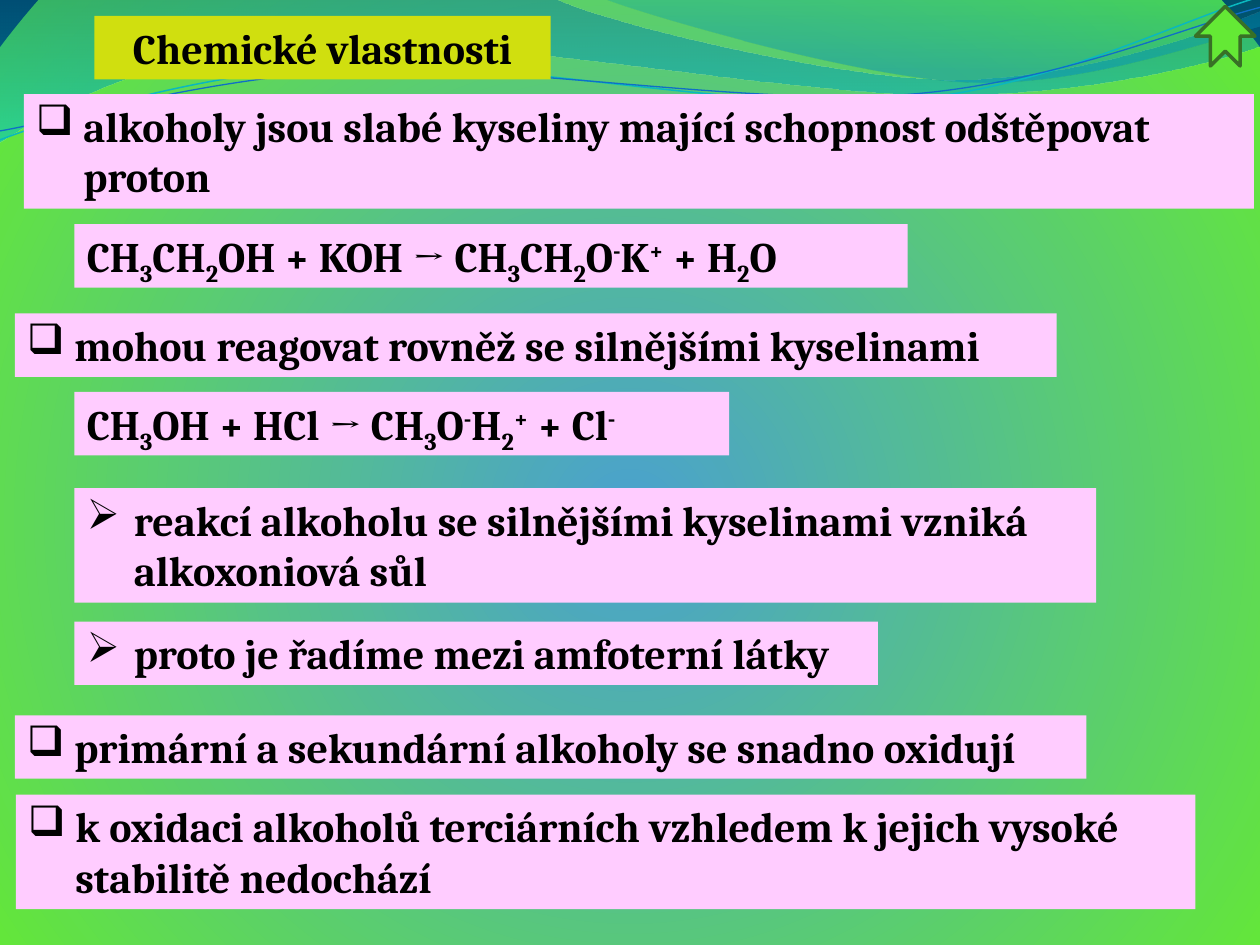
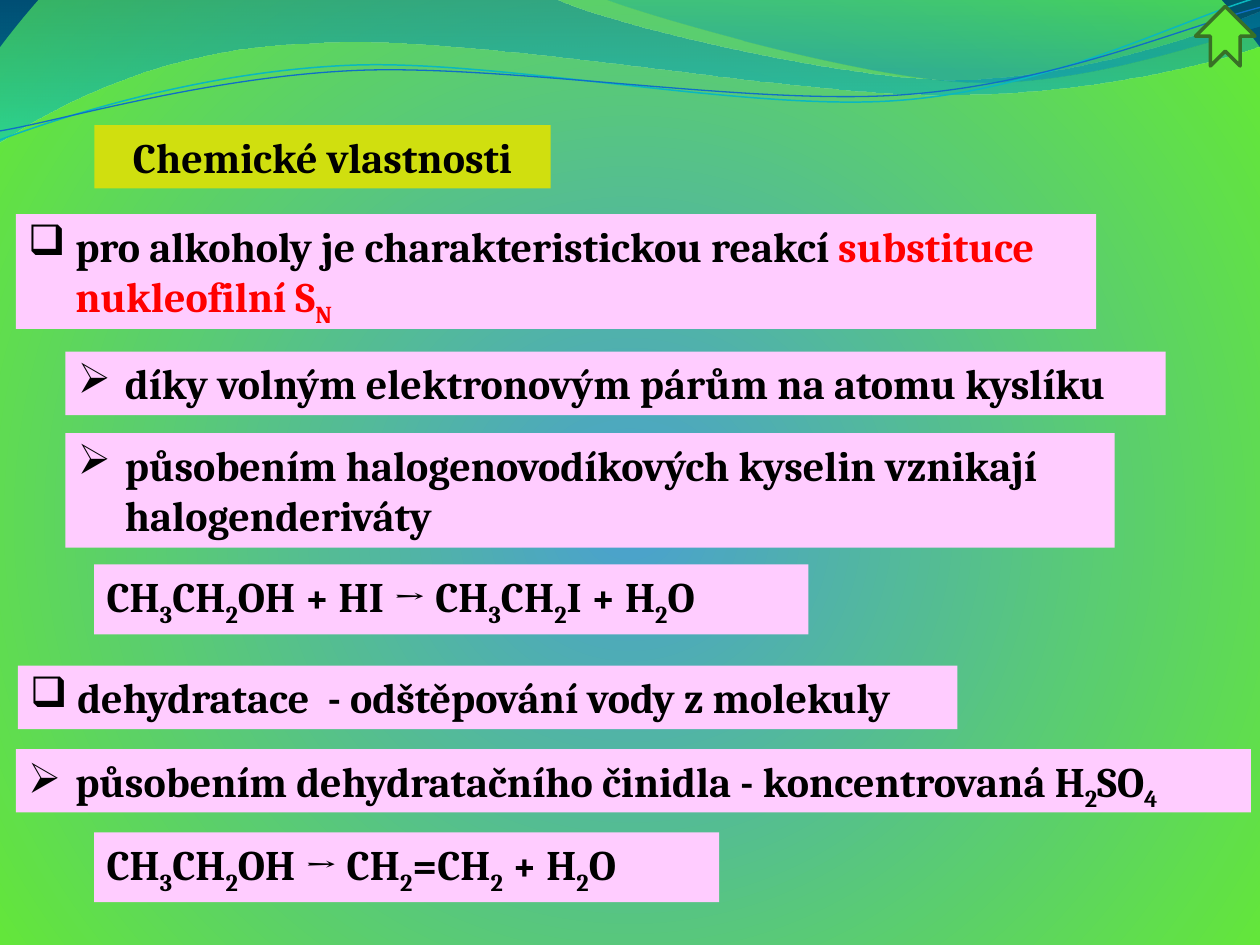
from lxml import etree
from pptx import Presentation
from pptx import util as u
from pptx.dml.color import RGBColor
from pptx.enum import shapes, text as t
from pptx.oxml.ns import qn

COLORS = {
    "title": "D0DF0F", "box": "FFCCFF", "text": "000000", "accent": "FF0000",
    "center": "4AA0D0", "edge": "64E935", "corner": "003050",
    "deep": "0074A1", "aqua": "00C6CF", "teal": "00A1A9", "blue": "008BBF",
    "cyan line": "0AB8BF", "blue line": "0F6FC6", "arrow line": "387026",
}
FONT, SIZE, BULLET_FONT = "Cambria", 24, "Wingdings"
TITLE = "Chemické vlastnosti"
SQUARE, POINTER, FORMULA = "q", "Ø", ""  # bullets are Wingdings letters
ONE_LINE, TWO_LINES, TALL = 1.28, 2.31, 1.41

# _x lowers and ^x raises one character, *...* is the accent colour.
# Each box: bullet, text, left, top, width, height in centimetres.
PAGES = [
    {"title top": 0.32, "boxes": [
        (SQUARE, "alkoholy jsou slabé kyseliny mající schopnost odštěpovat proton",
         0.48, 1.9, 24.8, TWO_LINES),
        (FORMULA, "CH_3CH_2OH + KOH → CH_3CH_2O^-K^+ + H_2O", 1.5, 4.52, 16.8, ONE_LINE),
        (SQUARE, "mohou reagovat rovněž se silnějšími kyselinami",
         0.3, 6.32, 21, ONE_LINE),
        (FORMULA, "CH_3OH + HCl → CH_3O^-H_2^+ + Cl^-", 1.5, 7.9, 13.2, ONE_LINE),
        (POINTER, "reakcí alkoholu se silnějšími kyselinami vzniká\nalkoxoniová sůl",
         1.5, 9.84, 20.6, TWO_LINES),
        (POINTER, "proto je řadíme mezi amfoterní látky", 1.5, 12.53, 16.2, ONE_LINE),
        (SQUARE, "primární a sekundární alkoholy se snadno oxidují",
         0.3, 14.42, 21.6, ONE_LINE),
        (SQUARE, "k oxidaci alkoholů terciárních vzhledem k jejich vysoké "
         "stabilitě nedochází", 0.32, 16.02, 23.78, TWO_LINES),
    ]},
    {"title top": 2.52, "boxes": [
        (SQUARE, "pro alkoholy je charakteristickou reakcí *substituce nukleofilní S_N*",
         0.32, 4.32, 21.78, TWO_LINES),
        (POINTER, "díky volným elektronovým párům na atomu kyslíku",
         1.32, 7.09, 22.18, ONE_LINE),
        (POINTER, "působením halogenovodíkových kyselin vznikají halogenderiváty",
         1.32, 8.73, 21.15, TWO_LINES),
        (FORMULA, "CH_3CH_2OH + HI → CH_3CH_2I + H_2O", 1.9, 11.38, 14.4, TALL),
        (SQUARE, "dehydratace  - odštěpování vody z molekuly",
         0.36, 13.42, 18.94, ONE_LINE),
        (POINTER, "působením dehydratačního činidla - koncentrovaná H_2SO_4",
         0.32, 15.1, 24.9, ONE_LINE),
        (FORMULA, "CH_3CH_2OH → CH_2=CH_2 + H_2O", 1.9, 16.78, 12.6, TALL),
    ]},
]

# Each wave is a list of Bézier chains, joined by straight lines.
BANDS = [
    ([[(0, 0)],
      [(11.18, -0.03), (12.09, 0.43), (16.87, 1.6), (19.25, 1.6),
       (21.67, 1.6), (24.33, 0.66), (25.4, 0.23)],
      [(25.43, 0.91), (24.97, 1.12), (22.1, 1.93), (18.95, 1.91),
       (15.8, 1.91), (9.7, 0.71), (6.53, 0.86), (3.28, 0.91), (1.17, 2.11), (-0.03, 2.87)]],
     [(0, "deep", 45), (100, "aqua", 55)]),
    ([[(12.17, -0.03), (12.93, 0.28), (17.32, 1.57), (19.53, 1.65),
       (21.74, 1.75), (24.41, 0.81), (25.4, 0.53)], [(25.4, 0)]],
     [(0, "teal", 30), (80, "blue", 45)]),
]
CURVE_ANGLE = 357.3
CURVES = [
    ([[(-0.05, 2.22), (1.19, 1.82), (4.02, 1.04), (7.05, 1.05), (10.05, 1.06),
       (15.02, 2.37), (18.08, 2.28), (21.13, 2.2), (23.87, 0.91), (25.41, 0.55)]],
     "cyan line", 0.85),
    ([[(-0.04, 2.04), (1.16, 1.9), (4.18, 1.15), (7.2, 1.16), (10.25, 1.18),
       (15.13, 2.25), (18.18, 2.17), (21.21, 2.1), (23.93, 1.06), (25.45, 0.75)]],
     "blue line", 0.75),
]


def rgb(name):
    return RGBColor.from_string(COLORS[name])


def paint(shape, fill=None, line=None, width=1):
    if fill:
        shape.fill.solid()
        shape.fill.fore_color.rgb = rgb(fill)
    else:
        shape.fill.background()
    if line:
        shape.line.color.rgb = rgb(line)
        shape.line.width = u.Pt(width)
    else:
        shape.line.fill.background()
    shape.shadow.inherit = False


def set_gradient(owner, fill, stops, center=None):
    """Vertical gradient, or a circular one when center gives its fill-to rectangle."""
    fill.gradient()
    gradient = owner.find(".//" + qn("a:gradFill"))
    gradient.clear()
    stop_list = etree.SubElement(gradient, qn("a:gsLst"))
    for position, name, opacity in stops:
        stop = etree.SubElement(stop_list, qn("a:gs"), pos=str(position * 1000))
        color = etree.SubElement(stop, qn("a:srgbClr"), val=COLORS[name])
        if opacity < 100:
            etree.SubElement(color, qn("a:alpha"), val=str(opacity * 1000))
    if center:
        shade = etree.SubElement(gradient, qn("a:path"), {"path": "circle"})
        sides = {side: str(value * 1000) for side, value in center.items()}
        etree.SubElement(shade, qn("a:fillToRect"), sides)
    else:
        etree.SubElement(gradient, qn("a:lin"), ang="5400000", scaled="1")


def add_wave(page, chains, close):
    """Draw the control points as a polygon, then turn its sides into curves."""
    points = [(u.Cm(x), u.Cm(y)) for chain in chains for x, y in chain]
    builder = page.shapes.build_freeform(*points[0])
    builder.add_line_segments(points[1:], close=close)
    wave = builder.convert_to_shape()
    steps = list(wave.element.find(".//" + qn("a:path")))
    start = 0
    for chain in chains:
        for first in range(start + 1, start + len(chain), 3):
            curve = etree.Element(qn("a:cubicBezTo"))
            steps[first].addprevious(curve)
            for step in steps[first:first + 3]:
                curve.append(step[0])
                step.getparent().remove(step)
        start += len(chain)
    return wave


def add_waves_to_layout(page):
    waves = []
    for chains, stops in BANDS:
        wave = add_wave(page, chains, True)
        paint(wave)
        set_gradient(wave.element, wave.fill, stops)
        waves.append(wave)
    for chains, color, width in CURVES:
        wave = add_wave(page, chains, False)
        wave.rotation = CURVE_ANGLE
        paint(wave, line=color, width=width)
        waves.append(wave)
    for wave in waves:
        page.slide_layout.shapes.element.append(wave.element)


def split_spans(marked):
    """Yield (text, baseline, color) for each stretch of equal format."""
    baselines = {"_": -25, "^": 30}
    baseline, color, part = 0, "text", ""
    for sign in marked:
        if sign in baselines or sign == "*":
            if part:
                yield part, baseline, color
            part, baseline = "", baselines.get(sign, 0)
            if sign == "*":
                color = "accent" if color == "text" else "text"
        elif baseline and part:
            yield part, baseline, color
            part, baseline = sign, 0
        else:
            part += sign
    if part:
        yield part, baseline, color


def write(shape, marked, align=t.PP_ALIGN.LEFT, bullet=""):
    frame = shape.text_frame
    frame.word_wrap = True
    frame.auto_size = t.MSO_AUTO_SIZE.NONE
    frame.vertical_anchor = t.MSO_ANCHOR.TOP
    para = frame.paragraphs[0]
    para.alignment = align
    if bullet:
        properties = para._p.get_or_add_pPr()
        properties.set("marL", str(u.Cm(0.95)))
        properties.set("indent", str(-u.Cm(0.95)))
        etree.SubElement(properties, qn("a:buFont"), typeface=BULLET_FONT,
                         pitchFamily="2", charset="2")
        etree.SubElement(properties, qn("a:buChar"), char=bullet)
    for number, line in enumerate(marked.split("\n")):
        if number:
            para.add_line_break()
        for part, baseline, color in split_spans(line):
            span = para.add_run()
            span.text = part
            span.font.name, span.font.size, span.font.bold = FONT, u.Pt(SIZE), True
            span.font.color.rgb = rgb(color)
            if baseline:
                span._r.get_or_add_rPr().set("baseline", str(baseline * 1000))


def add_title(page, top):
    title = page.shapes.title
    title.left, title.top = u.Cm(1.9), u.Cm(top)
    title.width, title.height = u.Cm(9.2), u.Cm(ONE_LINE)
    title.fill.solid()
    title.fill.fore_color.rgb = rgb("title")
    write(title, TITLE, align=t.PP_ALIGN.CENTER)


def add_box(page, bullet, marked, *place):
    box = page.shapes.add_shape(shapes.MSO_SHAPE.RECTANGLE, *map(u.Cm, place))
    paint(box, "box")
    write(box, marked, bullet=bullet)


def add_up_arrow(page):
    arrow = page.shapes.add_shape(shapes.MSO_SHAPE.NOTCHED_RIGHT_ARROW,
                                  u.Cm(24.1), u.Cm(0.13), u.Cm(1.2), u.Cm(1.2))
    arrow.rotation = 270
    paint(arrow, "edge", "arrow line", 2)


def main():
    deck = Presentation()
    deck.slide_width, deck.slide_height = u.Cm(25.4), u.Cm(19.05)
    master = deck.slide_master
    set_gradient(master.element, master.background.fill,
                 [(0, "center", 100), (100, "edge", 100), (100, "corner", 100)],
                 center={"l": 10, "t": 110, "r": 10, "b": 100})
    layout = deck.slide_layouts.get_by_name("Title Only")
    for number, content in enumerate(PAGES):
        page = deck.slides.add_slide(layout)
        if number == 0:
            add_waves_to_layout(page)
        add_title(page, content["title top"])
        for box in content["boxes"]:
            add_box(page, *box)
        add_up_arrow(page)
    deck.save("out.pptx")


if __name__ == "__main__":
    main()
